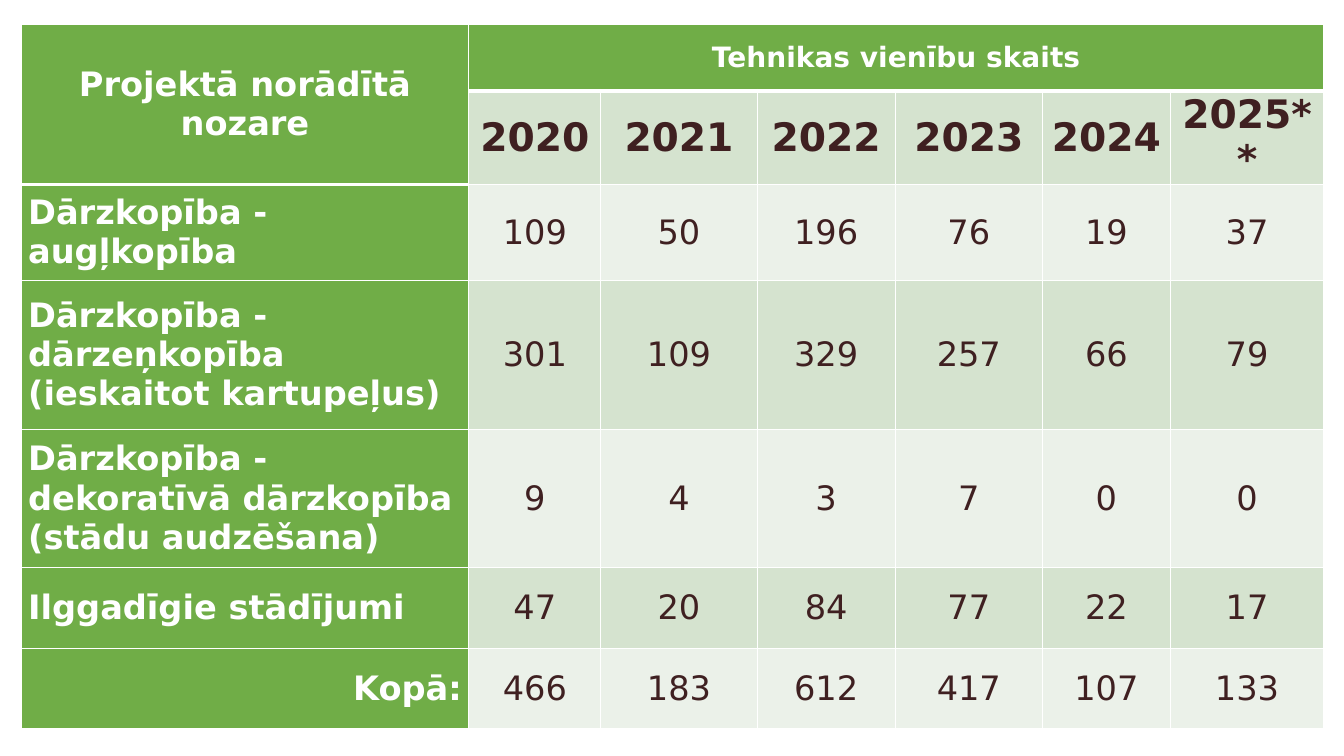
from lxml.etree import SubElement
from pptx import Presentation
from pptx.dml.color import RGBColor
from pptx.enum.text import MSO_ANCHOR, PP_ALIGN
from pptx.oxml.ns import qn
from pptx.util import Pt

PX = 9144  # EMU per px, 100 px to the inch
FONT = "DejaVu Sans"
WHITE = RGBColor(0xFF, 0xFF, 0xFF)
GREEN = RGBColor(0x70, 0xAD, 0x47)
BANDS = [RGBColor(0xEB, 0xF1, 0xE9), RGBColor(0xD5, 0xE3, 0xCF)]
BROWN = RGBColor(0x3F, 0x20, 0x21)

COL_WIDTHS = [444, 131, 155, 137, 146, 127, 152]
ROW_HEIGHTS = [66, 93, 95, 148, 137, 80, 80]
ROWS = [
    ["Projektā norādītā nozare", "Tehnikas vienību skaits", "", "", "", "", ""],
    ["", "2020", "2021", "2022", "2023", "2024", "2025**"],
    ["Dārzkopība - augļkopība", 109, 50, 196, 76, 19, 37],
    ["Dārzkopība - dārzeņkopība (ieskaitot kartupeļus)", 301, 109, 329, 257, 66, 79],
    ["Dārzkopība - dekoratīvā dārzkopība (stādu audzēšana)", 9, 4, 3, 7, 0, 0],
    ["Ilggadīgie stādījumi", 47, 20, 84, 77, 22, 17],
    ["Kopā:", 466, 183, 612, 417, 107, 133],
]
TEXT_SIZES = {(0, 1): 20, **{(1, col): 28 for col in range(1, 7)}}


def set_borders(cell, top, bottom):
    """Draw white borders, with top and bottom widths in points."""
    tcPr = cell._tc.get_or_add_tcPr()
    for side, width in (("L", 1), ("R", 1), ("T", top), ("B", bottom)):
        ln = SubElement(tcPr, qn(f"a:ln{side}"), w=str(Pt(width)))
        fill = SubElement(ln, qn("a:solidFill"))
        SubElement(fill, qn("a:srgbClr"), val=str(WHITE))


def alignment(row, col):
    if col == 0 and row >= 2:
        return PP_ALIGN.RIGHT if row == len(ROWS) - 1 else PP_ALIGN.LEFT
    return PP_ALIGN.CENTER


def format_cell(cell, row, col):
    is_heading = row == 0 or col == 0
    # The thick rule runs below the heading: after row 1 on the left, row 0 elsewhere
    last_heading_row = 1 if col == 0 else 0
    set_borders(cell,
                top=3 if row == last_heading_row + 1 else 1,
                bottom=3 if row == last_heading_row else 1)
    cell.fill.solid()
    cell.fill.fore_color.rgb = GREEN if is_heading else BANDS[row % 2]
    cell.vertical_anchor = MSO_ANCHOR.MIDDLE
    cell.margin_left = cell.margin_right = 7 * PX
    cell.margin_top = cell.margin_bottom = 0
    text = str(ROWS[row][col])
    if not text:
        return
    p = cell.text_frame.paragraphs[0]
    p.alignment = alignment(row, col)
    r = p.add_run()
    r.text = text
    r.font.name = FONT
    r.font.size = Pt(TEXT_SIZES.get((row, col), 24))
    r.font.bold = is_heading or row == 1
    r.font.color.rgb = WHITE if is_heading else BROWN


def add_equipment_table(s, left, top):
    frame = s.shapes.add_table(len(ROWS), len(COL_WIDTHS), left * PX, top * PX,
                               sum(COL_WIDTHS) * PX, sum(ROW_HEIGHTS) * PX)
    table = frame.table
    table.first_row = table.horz_banding = False
    for column, width in zip(table.columns, COL_WIDTHS):
        column.width = width * PX
    for table_row, height in zip(table.rows, ROW_HEIGHTS):
        table_row.height = height * PX
    table.cell(0, 0).merge(table.cell(1, 0))
    table.cell(0, 1).merge(table.cell(0, 6))
    for row in range(len(ROWS)):
        for col in range(len(COL_WIDTHS)):
            format_cell(table.cell(row, col), row, col)


def main():
    prs = Presentation()
    prs.slide_width, prs.slide_height = 1333 * PX, 750 * PX
    s = prs.slides.add_slide(prs.slide_layouts[6])
    add_equipment_table(s, 21, 24)
    prs.save("out.pptx")


if __name__ == "__main__":
    main()
